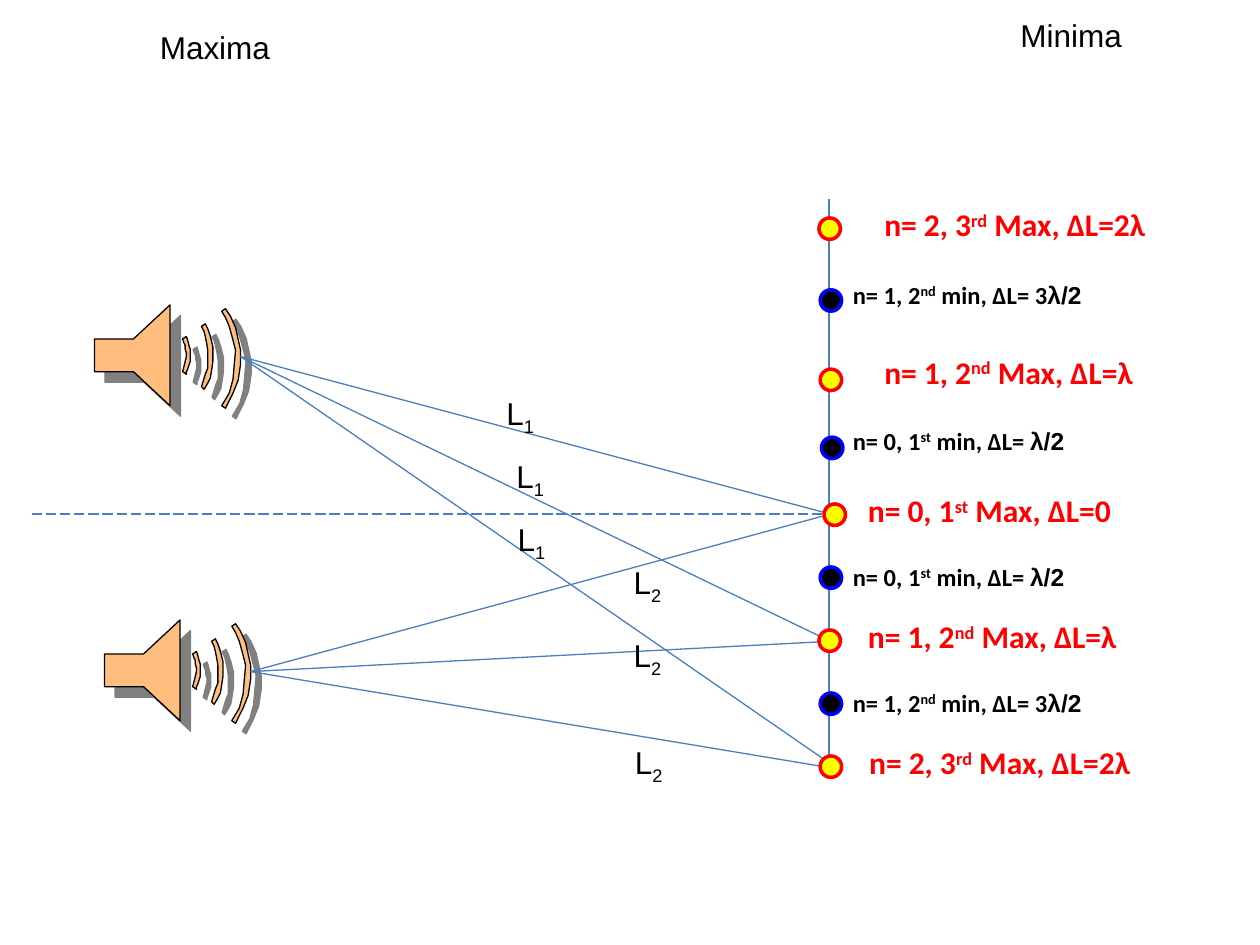
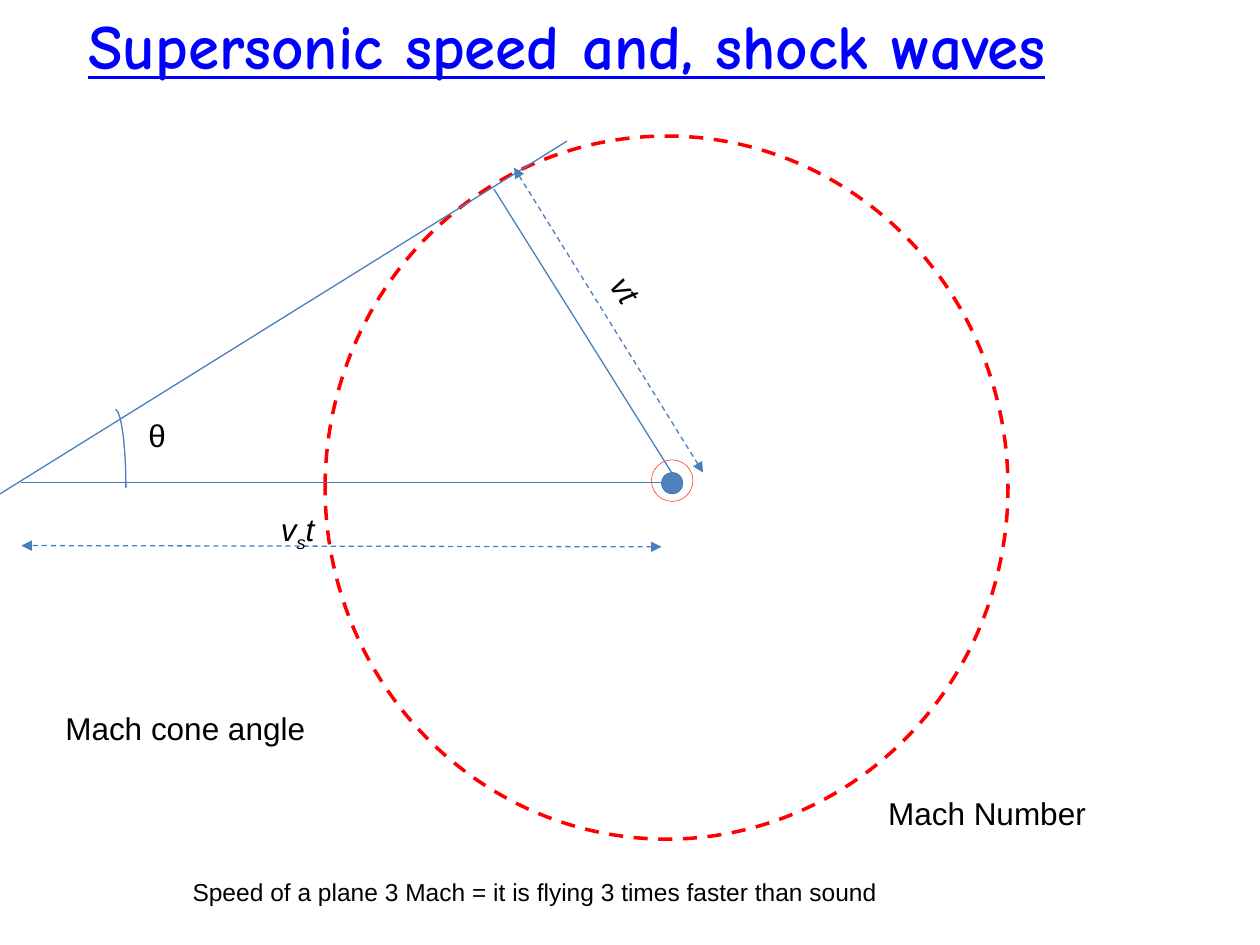
from lxml import etree
from pptx import Presentation
from pptx import util as u
from pptx.dml.color import RGBColor
from pptx.enum import dml, shapes, text
from pptx.oxml.ns import qn

BLACK, RED, BLUE, YELLOW = "000000", "FF0000", "0000FF", "FFFF00"
LINE, ACCENT, ACCENT_EDGE = "4B7EBC", "4F81BD", "3A5F8C"
SPEAKER, SHADOW = "FFBE7D", "808080"
DASH, LONG_DASH = dml.MSO_LINE.DASH, dml.MSO_LINE.LONG_DASH
SUB, SUPER = -25, 30

# Loudspeaker outlines in hundredths of an inch: the horn and three waves
SPEAKER_PARTS = [
    [(75, 269), (106, 269), (135, 242), (135, 322), (106, 295), (75, 295)],
    [(145, 269), (148, 267), (149, 270), (150, 274), (151, 277), (151, 287),
     (150, 290), (149, 293), (148, 295), (148, 297), (145, 295), (146, 291),
     (147, 287), (148, 283), (148, 280), (147, 277), (147, 274), (146, 272)],
    [(163, 257), (165, 261), (167, 267), (169, 275), (169, 287), (168, 294),
     (167, 300), (165, 304), (162, 309), (160, 307), (163, 297), (165, 292),
     (165, 278), (164, 272), (163, 267), (162, 263), (160, 259)],
    [(176, 247), (179, 245), (183, 251), (187, 260), (189, 269), (191, 278),
     (191, 289), (189, 302), (185, 312), (179, 324), (176, 322), (182, 312),
     (185, 301), (186, 289), (187, 278), (185, 270), (182, 259), (179, 252)],
]


def color(value):
    return RGBColor.from_string(value)


class Sketch:
    """Holds the shared style and the slide being drawn."""

    def __init__(self):
        self.deck = Presentation()
        self.deck.slide_width = u.Inches(10)
        self.deck.slide_height = u.Inches(7.5)
        self.page = None

    def new_page(self):
        self.page = self.deck.slides.add_slide(self.deck.slide_layouts[6])

    def paint(self, shape, fill, edge, weight, dash=None):
        shape.shadow.inherit = False
        if fill:
            shape.fill.solid()
            shape.fill.fore_color.rgb = color(fill)
        else:
            shape.fill.background()
        self.stroke(shape.line, edge, weight, dash)

    def stroke(self, line, edge, weight, dash=None):
        line.color.rgb = color(edge)
        line.width = u.Pt(weight)
        if dash:
            line.dash_style = dash

    def shape(self, kind, left, top, width, height, fill, edge, weight, dash=None):
        frame = [u.Inches(n) for n in (left, top, width, height)]
        shape = self.page.shapes.add_shape(kind, *frame)
        self.paint(shape, fill, edge, weight, dash)

    def ellipse(self, *args):
        self.shape(shapes.MSO_SHAPE.OVAL, *args)

    def dot(self, left, top, fill, edge, weight=2):
        self.ellipse(left, top, 0.17, 0.17, fill, edge, weight)

    def line(self, start, end, dash=None, arrows=False):
        ends = [u.Inches(n) for n in (*start, *end)]
        connector = self.page.shapes.add_connector(
            shapes.MSO_CONNECTOR.STRAIGHT, *ends)
        self.stroke(connector.line, LINE, 0.75, dash)
        properties = connector._element.spPr
        etree.SubElement(properties, qn("a:effectLst"))
        if arrows:
            outline = properties.find(qn("a:ln"))
            for end_name in ("a:headEnd", "a:tailEnd"):
                etree.SubElement(outline, qn(end_name), type="triangle")

    def label(self, left, top, width, height, runs, size=18, font="Arial",
              ink=BLACK, bold=False, italic=False, underline=False,
              wrap=False, center=False, turn=0):
        """Each run is (text, baseline shift) or (text, baseline shift, font)."""
        box = self.page.shapes.add_textbox(
            *[u.Inches(n) for n in (left, top, width, height)])
        box.rotation = turn
        box.text_frame.word_wrap = wrap
        para = box.text_frame.paragraphs[0]
        if center:
            para.alignment = text.PP_ALIGN.CENTER
        for words, shift, *other_font in runs:
            span = para.add_run()
            span.text = words
            style = span.font
            style.name = other_font[0] if other_font else font
            style.size = u.Pt(size)
            style.bold, style.italic, style.underline = bold, italic, underline
            style.color.rgb = color(ink)
            if shift:
                span._r.get_or_add_rPr().set("baseline", str(shift * 1000))

    def speaker(self, right, down):
        """Draw a loudspeaker moved by hundredths of an inch."""
        parts = [[(x + right, y + down) for x, y in part] for part in SPEAKER_PARTS]
        builder = None
        for first, *rest in parts:
            if builder is None:
                builder = self.page.shapes.build_freeform(
                    *first, scale=u.Inches(0.01))
            else:
                builder.move_to(*first)
            builder.add_line_segments(rest, close=True)
        shape = builder.convert_to_shape()
        self.paint(shape, SPEAKER, BLACK, 0.75)
        effects = shape._element.spPr.find(qn("a:effectLst"))
        shadow = etree.SubElement(effects, qn("a:outerShdw"), dist=str(u.Pt(8.5)),
                                  dir=str(45 * 60000), algn="ctr", rotWithShape="0")
        etree.SubElement(shadow, qn("a:srgbClr"), val=SHADOW)


def interference(sketch):
    sketch.new_page()
    sketch.label(1.17, 0.17, 1.09, 0.4, [("Maxima", 0)])
    sketch.label(8, 0.08, 1.02, 0.4, [("Minima", 0)])

    # Sources, screen and axis
    sketch.speaker(0, 0)
    sketch.speaker(8, 250)
    sketch.line((6.58, 1.58), (6.58, 6.17))
    sketch.line((0.25, 4.08), (6.58, 4.08), LONG_DASH)

    # Sound paths: ends of L1 and L2, then the places of their labels
    for upper, lower, first, second in [
        ((6.59, 4.08), (6.59, 4.08), (3.92, 3.08), (4.93, 4.42)),
        ((6.59, 5.09), (6.59, 5.09), (4, 3.58), (4.93, 5)),
        ((6.53, 6.02), (6.51, 6.08), (4.01, 4.08), (4.94, 5.85)),
    ]:
        sketch.line((1.91, 2.83), upper)
        sketch.line((1.99, 5.33), lower)
        for number, place in (("1", first), ("2", second)):
            sketch.label(*place, 0.67, 0.4, [("L", 0), (number, SUB)], wrap=True)

    # Maxima: dot, label, order
    orders = [("1", "st", "0", 2.23), ("2", "nd", "λ", 2.28), ("3", "rd", "2λ", 2.37)]
    for dot, place, n in [
        ((6.5, 1.73), (6.92, 1.58), 2), ((6.51, 2.93), (6.92, 2.75), 1),
        ((6.54, 4), (6.79, 3.85), 0), ((6.5, 5), (6.79, 4.85), 1),
        ((6.51, 6), (6.8, 5.85), 2),
    ]:
        rank, suffix, difference, width = orders[n]
        sketch.dot(*dot, YELLOW, RED)
        sketch.label(*place, width, 0.4,
                     [(f"n= {n}, {rank}", 0), (suffix, SUPER),
                      (f" Max, ΔL={difference}", 0)],
                     font="Calibri", ink=RED, bold=True)

    # Minima: dot, label height, order
    for dot, top, n in [((6.51, 2.3), 2.17, 1), ((6.52, 3.47), 3.33, 0),
                        ((6.51, 4.5), 4.41, 0), ((6.51, 5.5), 5.41, 1)]:
        rank, suffix = orders[n][:2]
        sketch.dot(*dot, BLACK, BLUE)
        sketch.label(6.67, top, 2.09 if n else 1.95, 0.34,
                     [(f"n= {n}, {rank}", 0), (suffix, SUPER),
                      (" min, ΔL= 3" if n else " min, ΔL= ", 0),
                      ("λ/2", 0, "Arial")],
                     size=14, font="Calibri", bold=True)


def shock_waves(sketch):
    sketch.new_page()
    sketch.label(0, 0, 9, 1.12, [("Supersonic speed and, shock waves", 0)],
                 size=36, font="Comic Neue", ink=BLUE, bold=True,
                 underline=True, wrap=True, center=True)

    # Source and wave fronts
    sketch.dot(5.25, 3.75, ACCENT, ACCENT_EDGE, 0.25)
    sketch.ellipse(5.17, 3.65, 0.33, 0.33, None, RED, 0.25)
    sketch.ellipse(2.58, 1.08, 5.42, 5.58, None, RED, 2, DASH)

    # Mach cone triangle
    sketch.line((5.33, 3.83), (0.17, 3.83))
    sketch.line((4.5, 1.12), (0, 3.92))
    sketch.line((5.33, 3.75), (3.92, 1.5))

    # Distances and cone angle
    sketch.line((5.25, 4.34), (0.17, 4.33), DASH, arrows=True)
    sketch.label(2.13, 4, 0.48, 0.4, [("v", 0), ("s", SUB), ("t", 0)], italic=True)
    sketch.line((5.58, 3.75), (4.08, 1.33), DASH, arrows=True)
    sketch.label(4.77, 2.1, 0.4, 0.4, [("vt", 0)], italic=True, turn=55.7)
    sketch.label(1.08, 3.25, 0.34, 0.4, [("θ", 0)])
    sketch.shape(shapes.MSO_SHAPE.ARC, 0.83, 3.25, 0.17, 1.25, None, LINE, 0.75)

    # Captions
    sketch.label(0.42, 5.58, 2.19, 0.4, [("Mach cone angle", 0)])
    sketch.label(6.95, 6.25, 1.79, 0.4, [("Mach Number", 0)])
    sketch.label(1.43, 6.91, 5.66, 0.34, [
        ("Speed of a plane 3 Mach = it is flying 3 times faster than sound", 0)],
        size=14)


def main():
    sketch = Sketch()
    interference(sketch)
    shock_waves(sketch)
    sketch.deck.save("out.pptx")


if __name__ == "__main__":
    main()
